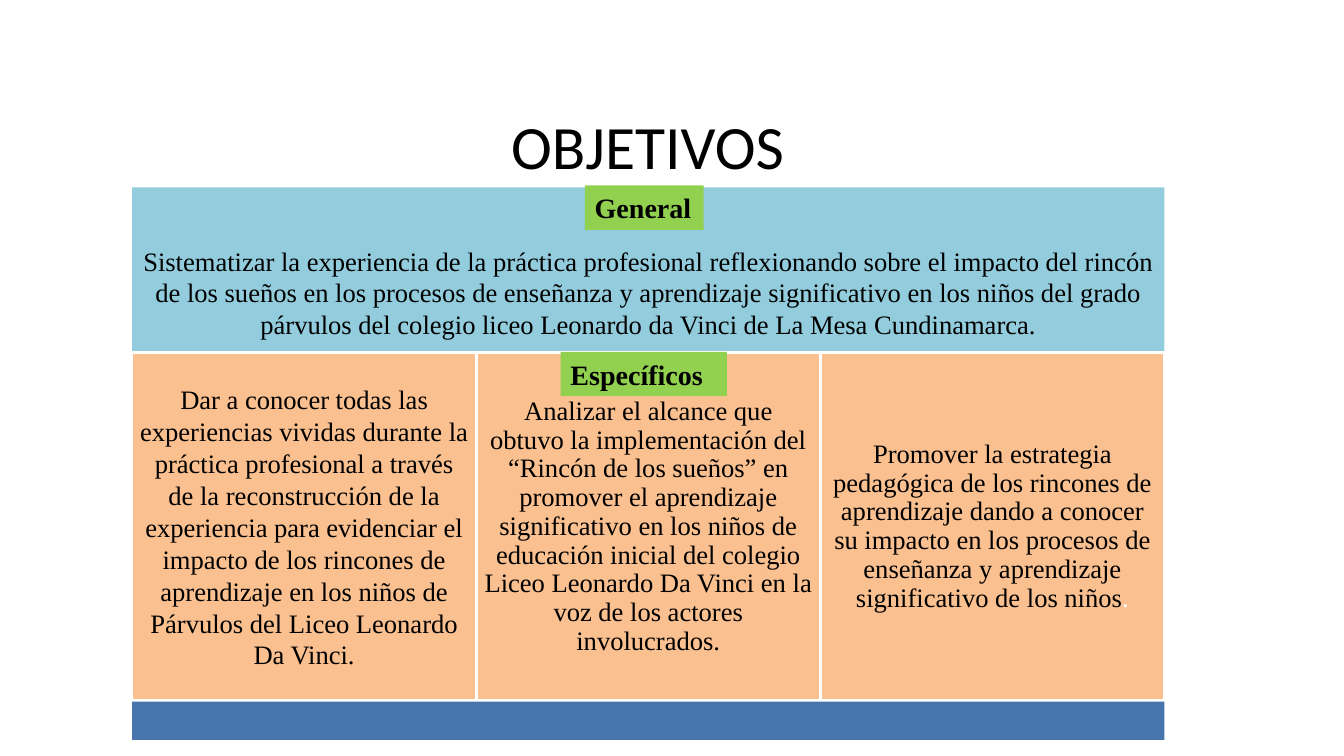
from dataclasses import dataclass
from typing import Optional

from pptx import Presentation
from pptx.dml.color import RGBColor
from pptx.enum.shapes import MSO_SHAPE
from pptx.enum.text import MSO_ANCHOR, PP_ALIGN
from pptx.util import Inches, Pt

BLACK = RGBColor(0x00, 0x00, 0x00)
WHITE = RGBColor(0xFF, 0xFF, 0xFF)
SKY = RGBColor(0x93, 0xCD, 0xDD)
PEACH = RGBColor(0xFA, 0xC0, 0x90)
BLUE = RGBColor(0x48, 0x75, 0xAC)
GREEN = RGBColor(0x92, 0xD0, 0x50)

LEFT, WIDTH = 1.31, 10.24
COL_TOP, COL_HEIGHT = 3.5, 3.45
SERIF = "Times New Roman"


@dataclass
class Panel:
    left: float
    top: float
    width: float
    height: float
    fill: RGBColor
    text: str = ""
    size: float = 19
    bold: bool = False
    align: PP_ALIGN = PP_ALIGN.CENTER
    line: Optional[RGBColor] = None
    spacing: float = 1.0
    inset: float = 0.08
    top_inset: float = 0.08
    white_end: str = ""


@dataclass
class Goal:
    text: str
    spacing: float = 0.9
    white_end: str = ""


GENERAL = (
    "Sistematizar la experiencia de la práctica profesional reflexionando sobre "
    "el impacto del rincón de los sueños en los procesos de enseñanza y "
    "aprendizaje significativo en los niños del grado párvulos del colegio liceo "
    "Leonardo da Vinci de La Mesa Cundinamarca."
)
GOALS = [
    Goal(
        "Dar a conocer todas las experiencias vividas durante la práctica "
        "profesional a través de la reconstrucción de la experiencia para "
        "evidenciar el impacto de los rincones de aprendizaje en los niños de "
        "Párvulos del Liceo Leonardo Da Vinci.",
        spacing=1.0,
    ),
    Goal(
        "Analizar el alcance que obtuvo la implementación del “Rincón de los "
        "sueños” en promover el aprendizaje significativo en los niños de "
        "educación inicial del colegio Liceo Leonardo Da Vinci en la voz de los "
        "actores involucrados."
    ),
    Goal(
        "Promover la estrategia pedagógica de los rincones de aprendizaje dando a "
        "conocer su impacto en los procesos de enseñanza y aprendizaje "
        "significativo de los niños",
        white_end=".",
    ),
]


def add_panel(s, panel: Panel) -> None:
    sp = s.shapes.add_shape(
        MSO_SHAPE.RECTANGLE,
        Inches(panel.left), Inches(panel.top),
        Inches(panel.width), Inches(panel.height),
    )
    sp.shadow.inherit = False
    sp.fill.solid()
    sp.fill.fore_color.rgb = panel.fill
    if panel.line is None:
        sp.line.fill.background()
    else:
        sp.line.color.rgb = panel.line
        sp.line.width = Pt(2)
    if not panel.text:
        return
    tf = sp.text_frame
    tf.word_wrap = True
    tf.vertical_anchor = MSO_ANCHOR.MIDDLE
    tf.margin_left = tf.margin_right = Inches(panel.inset)
    tf.margin_top, tf.margin_bottom = Inches(panel.top_inset), Inches(0.08)
    p = tf.paragraphs[0]
    p.alignment = panel.align
    p.line_spacing = panel.spacing
    p.font.name, p.font.size, p.font.bold = SERIF, Pt(panel.size), panel.bold
    p.font.color.rgb = BLACK
    p.add_run().text = panel.text
    if panel.white_end:
        r = p.add_run()
        r.text = panel.white_end
        r.font.color.rgb = WHITE


def add_title(s, text: str) -> None:
    box = s.shapes.add_textbox(Inches(0.76), Inches(0.63), Inches(11.33), Inches(1.61))
    tf = box.text_frame
    tf.word_wrap = True
    tf.vertical_anchor = MSO_ANCHOR.MIDDLE
    p = tf.paragraphs[0]
    p.text = text
    p.alignment = PP_ALIGN.CENTER
    p.font.name, p.font.size = "Calibri", Pt(44)
    p.font.color.rgb = BLACK


def add_label(s, text: str, left: float, top: float, width: float) -> None:
    add_panel(s, Panel(left, top, width, 0.44, GREEN, text, size=20, bold=True,
                       align=PP_ALIGN.LEFT, inset=0.1))


def main() -> None:
    prs = Presentation()
    prs.slide_width, prs.slide_height = Inches(13.33), Inches(7.5)
    s = prs.slides.add_slide(prs.slide_layouts[6])

    add_title(s, "OBJETIVOS")
    add_panel(s, Panel(LEFT, 1.86, WIDTH, 1.64, SKY, GENERAL, top_inset=0.52))
    col_width = WIDTH / len(GOALS)
    for i, goal in enumerate(GOALS):
        add_panel(s, Panel(LEFT + i * col_width, COL_TOP, col_width, COL_HEIGHT,
                           PEACH, goal.text, line=WHITE, spacing=goal.spacing,
                           white_end=goal.white_end))
    add_panel(s, Panel(LEFT, 6.96, WIDTH, 0.38, BLUE))
    add_label(s, "Específicos", 5.56, 3.49, 1.65)
    add_label(s, "General", 5.8, 1.84, 1.18)

    prs.save("out.pptx")


if __name__ == "__main__":
    main()
